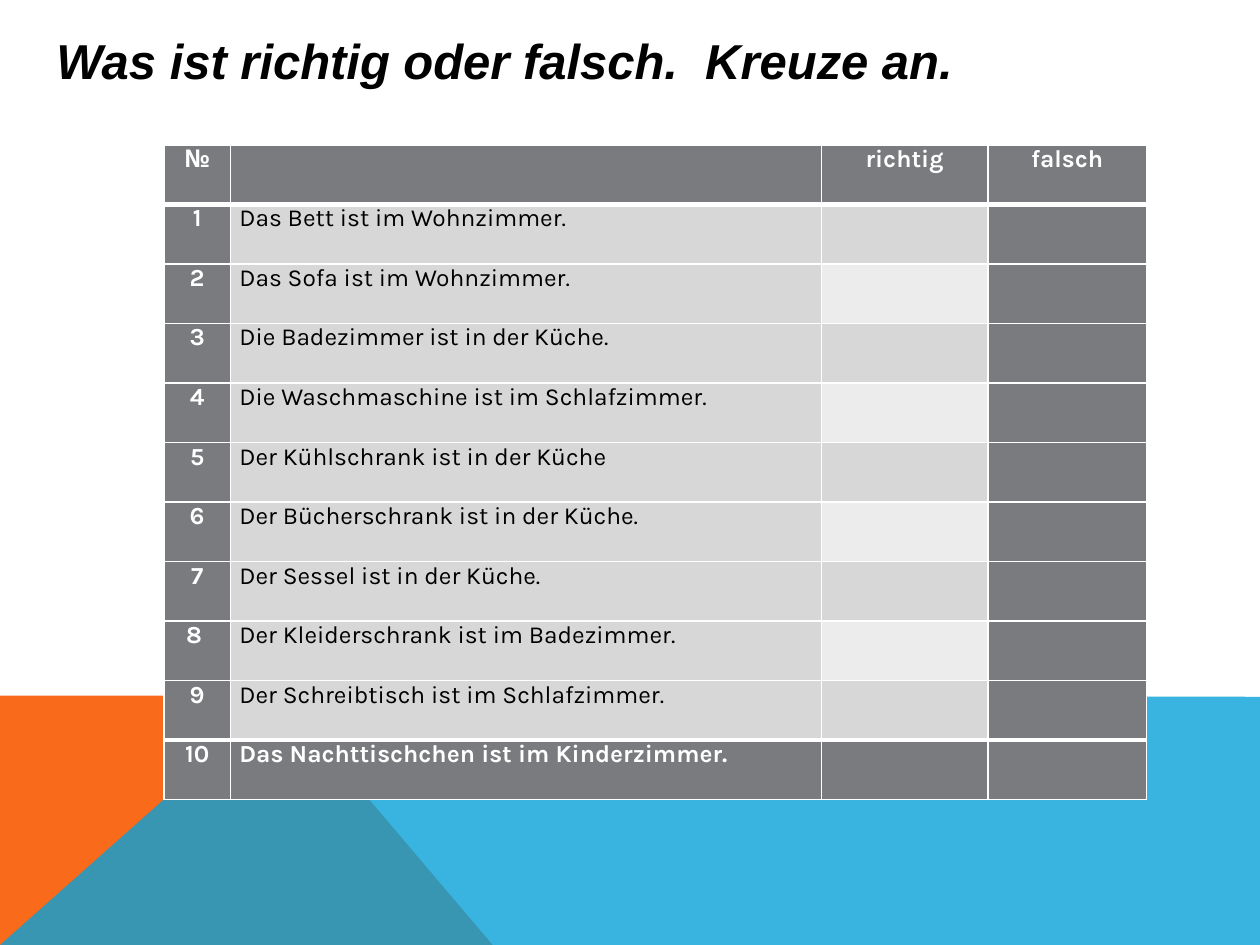
"""Build a German true-or-false worksheet slide about rooms and furniture."""
import pptx
import pptx.util
import pptx.dml.color
import pptx.enum.text
import pptx.oxml
import pptx.oxml.ns
from lxml import etree

RGB = pptx.dml.color.RGBColor
WHITE = RGB(0xFF, 0xFF, 0xFF)
BLACK = RGB(0, 0, 0)
DARK = RGB(0x79, 0x7B, 0x7E)
MID = RGB(0xD7, 0xD7, 0xD8)
LIGHT = RGB(0xEC, 0xEC, 0xEC)
ORANGE = RGB(0xF9, 0x6A, 0x1B)
BLUE = RGB(0x08, 0xA1, 0xD9)

TITLE = "Was ist richtig oder falsch.  Kreuze an."
HEADER = ("№", "", "richtig", "falsch")
SENTENCES = (
    "Das Bett ist im Wohnzimmer.",
    "Das Sofa ist im Wohnzimmer.",
    "Die Badezimmer ist in der Küche.",
    "Die Waschmaschine ist im Schlafzimmer.",
    "Der Kühlschrank ist in der Küche",
    "Der Bücherschrank ist in der Küche.",
    "Der Sessel ist in der Küche.",
    "Der Kleiderschrank ist im Badezimmer.",
    "Der Schreibtisch ist im Schlafzimmer.",
    "Das Nachttischchen ist im Kinderzimmer.",
)
COLS = (0.53, 4.69, 1.32, 1.26)
TABLE_BOX = (1.3, 1.15, 7.8, 5.2)
TITLE_BOX = (0.35, 0.17, 7.4, 1.04)
BANDS = (
    (((0, 7.5), (0, 5.52), (2.23, 5.52), (3.91, 7.5)), ORANGE, 100),
    (((0, 7.5), (2.23, 5.52), (10, 5.53), (10, 7.5)), BLUE, 80),
)
CELL_MARGINS = {"margin_left": 0.07, "margin_top": 0, "margin_right": 0.07, "margin_bottom": 0}
TITLE_FORMAT = {"name": "Arial", "size": pptx.util.Pt(28), "bold": True, "italic": True}


def inches(values):
    return [pptx.util.Inches(v) for v in values]


def write(p, text, color, formats):
    r = p.add_run()
    r.text = text
    r.font.color.rgb = color
    for name, value in formats.items():
        setattr(r.font, name, value)


def add_band(slide, points, color, opacity):
    corners = [tuple(inches(point)) for point in points]
    builder = slide.shapes.build_freeform(*corners[0])
    builder.add_line_segments(corners[1:], close=True)
    sp = builder.convert_to_shape()
    sp.shadow.inherit = False
    sp.fill.solid()
    sp.fill.fore_color.rgb = color
    sp.line.fill.background()
    if opacity < 100:
        qn = pptx.oxml.ns.qn
        clr = sp.fill._xPr.find(qn("a:solidFill")).find(qn("a:srgbClr"))
        etree.SubElement(clr, qn("a:alpha"), val=str(opacity * 1000))


def set_borders(cell, widths):
    tcPr = cell._tc.get_or_add_tcPr()
    for side in "LRTB":
        width = pptx.util.Pt(widths.get(side, 1))
        tcPr.append(pptx.oxml.parse_xml(
            f'<a:ln{side} {pptx.oxml.ns.nsdecls("a")} w="{width}"><a:solidFill>'
            f'<a:srgbClr val="{WHITE}"/></a:solidFill></a:ln{side}>'))


def cell_fill(row, col, last):
    if row in (0, last) or col in (0, 3):
        return DARK
    return LIGHT if col == 2 and row % 2 == 0 else MID


def add_quiz(slide):
    rows = [HEADER] + [(f"{n} " if n == 8 else str(n), text, "", "")
                       for n, text in enumerate(SENTENCES, 1)]
    last = len(rows) - 1
    table = slide.shapes.add_table(len(rows), len(COLS), *inches(TABLE_BOX)).table
    table.first_row = table.horz_banding = False
    for column, width in zip(table.columns, COLS):
        column.width = pptx.util.Inches(width)
    thick = {0: {"B": 3}, 1: {"T": 3}, last - 1: {"B": 3}, last: {"T": 3}}
    for i, row in enumerate(rows):
        table.rows[i].height = pptx.util.Inches(TABLE_BOX[3] / len(rows))
        for j, text in enumerate(row):
            cell = table.cell(i, j)
            for name, value in CELL_MARGINS.items():
                setattr(cell, name, pptx.util.Inches(value))
            set_borders(cell, thick.get(i, {}))
            fill = cell_fill(i, j, last)
            cell.fill.solid()
            cell.fill.fore_color.rgb = fill
            if text:
                p = cell.text_frame.paragraphs[0]
                if j != 1:
                    p.alignment = pptx.enum.text.PP_ALIGN.CENTER
                write(p, text, WHITE if fill == DARK else BLACK,
                      {"name": "Karla", "size": pptx.util.Pt(14), "bold": fill == DARK})


def main():
    prs = pptx.Presentation()
    prs.slide_width, prs.slide_height = inches((10, 7.5))
    slide = prs.slides.add_slide(prs.slide_layouts[6])
    for points, color, opacity in BANDS:
        add_band(slide, points, color, opacity)
    add_quiz(slide)
    tf = slide.shapes.add_textbox(*inches(TITLE_BOX)).text_frame
    tf.word_wrap = True
    tf.margin_top = pptx.util.Inches(0.07)
    write(tf.paragraphs[0], TITLE, BLACK, TITLE_FORMAT)
    prs.save("out.pptx")


if __name__ == "__main__":
    main()
